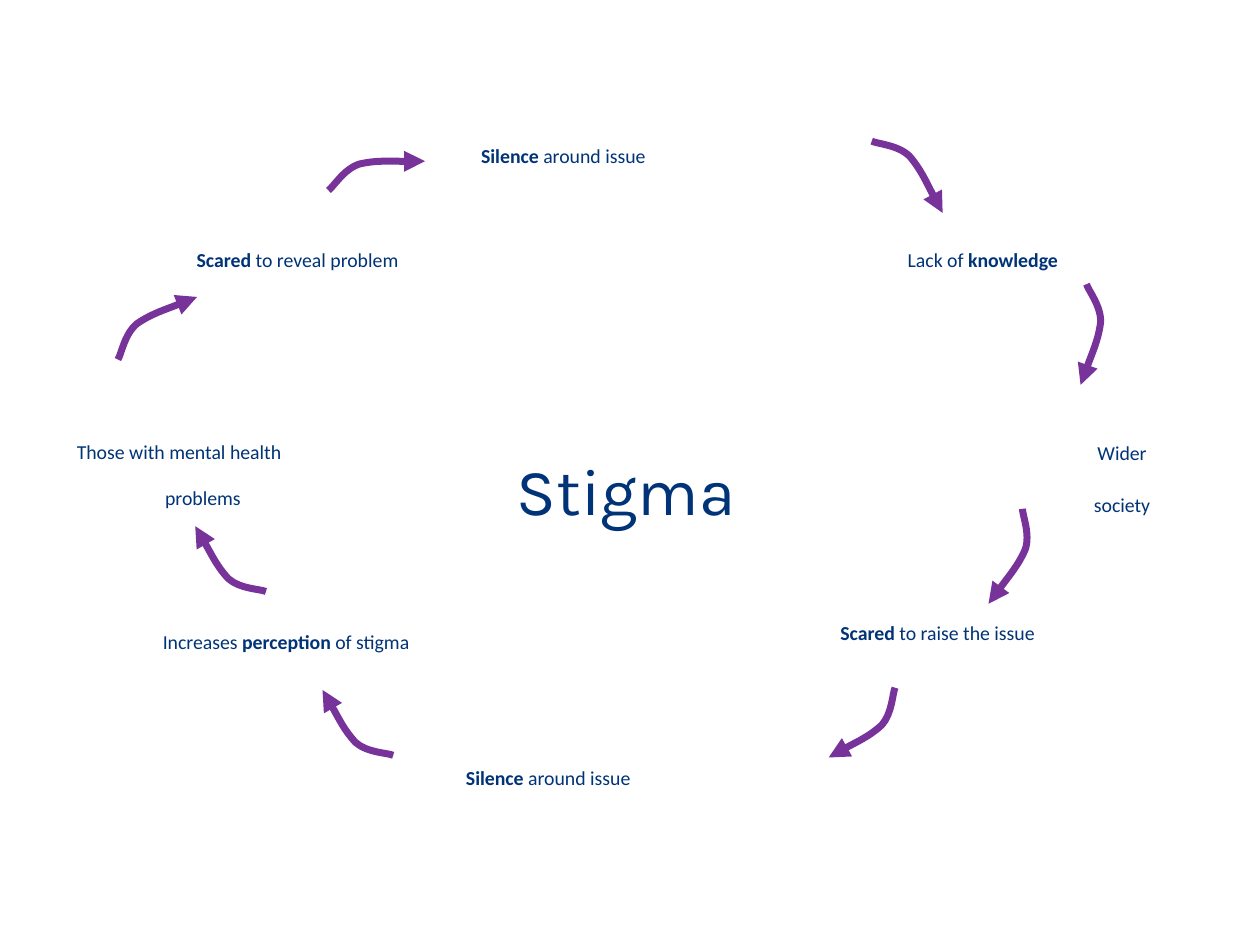
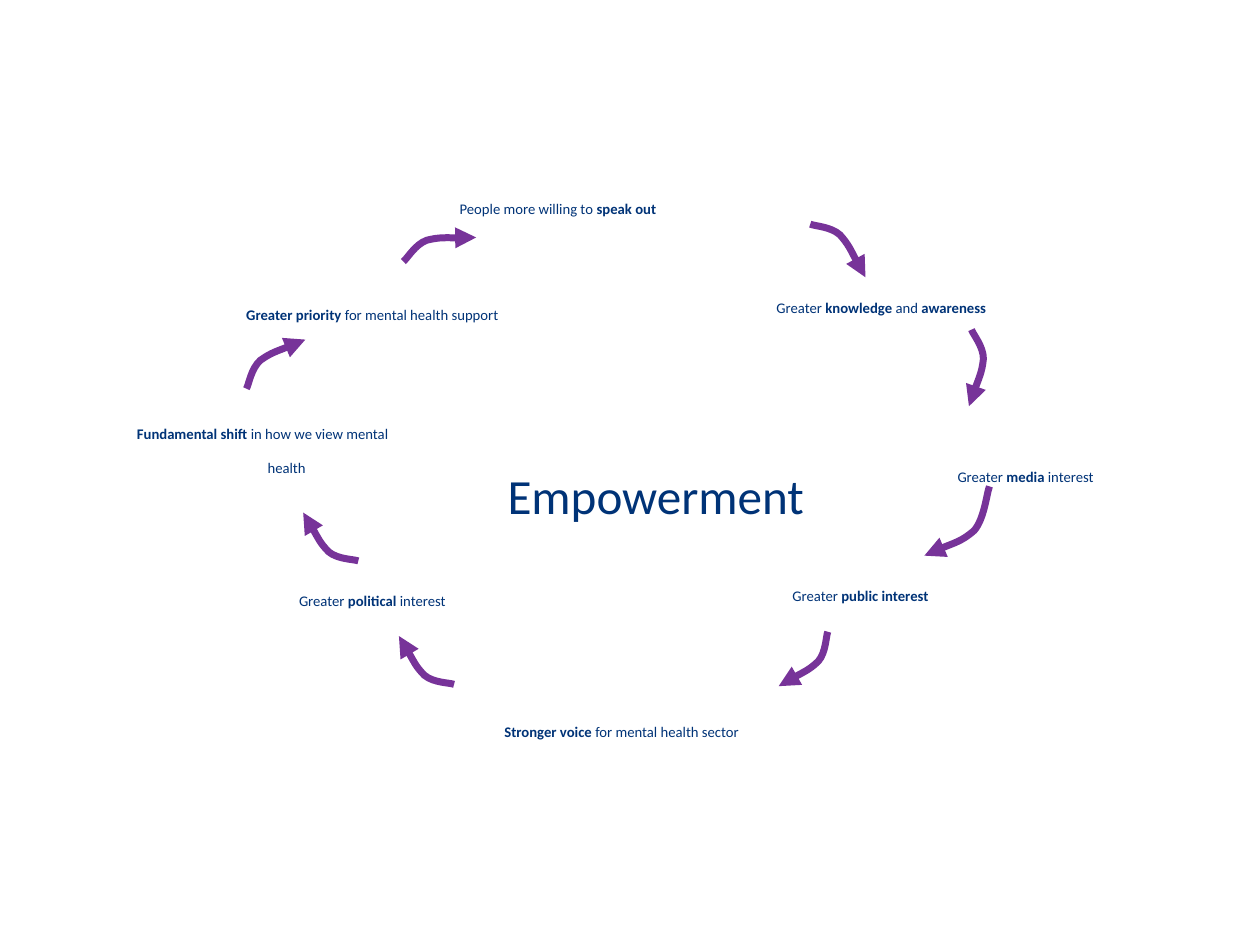
"""Build two slides that each show a ring of phrases joined by curved arrows."""
import dataclasses
import itertools

import pptx
import pptx.dml.color
import pptx.enum.text
import pptx.oxml.ns
import pptx.oxml.xmlchemy
import pptx.slide
import pptx.text.text
import pptx.util

NAVY = pptx.dml.color.RGBColor(0x00, 0x33, 0x77)
PURPLE = pptx.dml.color.RGBColor(0x77, 0x33, 0x99)
WHITE = pptx.dml.color.RGBColor(0xFF, 0xFF, 0xFF)
CENTER = pptx.enum.text.PP_ALIGN.CENTER
LEFT = pptx.enum.text.PP_ALIGN.LEFT
TOP = pptx.enum.text.MSO_ANCHOR.TOP
MIDDLE = pptx.enum.text.MSO_ANCHOR.MIDDLE
GROW = pptx.enum.text.MSO_AUTO_SIZE.SHAPE_TO_FIT_TEXT
FIXED = pptx.enum.text.MSO_AUTO_SIZE.NONE
BODY = "Calibri"
DROP = "-25000"
CURVE = [(0, 1), (0.05, 0.9), (0.13, 0.47), (0.29, 0.3),
         (0.47, 0.15), (0.86, 0.06), (1, 0)]


@dataclasses.dataclass
class Label:
    text: str
    box: tuple[float, float, float, float]
    hang: bool = True
    wrap: bool = False
    foot: float = 0


@dataclasses.dataclass
class Arrow:
    box: tuple[float, float, float, float]
    turn: float


@dataclasses.dataclass
class Ring:
    title: Label
    face: str
    head: float
    size: float
    labels: list[Label]
    arrows: list[Arrow]


RINGS = [
    Ring(
        Label("Stigma", (3.58, 2.92, 2.78, 0.83), hang=False, wrap=True),
        "Karla", 64.7, 19.4,
        [
            Label("*Silence *around issue", (3.72, 0.91, 2.76, 0.43), hang=False),
            Label("Wider\nsociety", (8.01, 3.14, 1.79, 1.6), wrap=True, foot=0.51),
            Label("*Scared *to reveal problem", (0.7, 1.74, 3.32, 0.43)),
            Label("Lack of *knowledge*", (6.55, 1.74, 2.5, 0.43)),
            Label("*Scared *to raise the issue", (5.8, 4.7, 3.28, 0.43)),
            Label("*Silence *around issue", (3.6, 5.85, 2.76, 0.43), hang=False),
            Label("Increases *perception *of stigma", (0.29, 4.77, 3.96, 0.43)),
            Label("Those with mental health problems", (0.23, 3.11, 2.38, 1.6),
                  wrap=True, foot=0.51),
        ],
        [
            Arrow((0.89, 2.43, 0.72, 0.35), 347.6),
            Arrow((2.63, 1.22, 0.72, 0.35), 9.1),
            Arrow((6.84, 1.23, 0.72, 0.35), 71.3),
            Arrow((8.24, 2.48, 0.72, 0.35), 119.3),
            Arrow((7.62, 4.24, 0.72, 0.35), 135.6),
            Arrow((6.5, 5.56, 0.68, 0.35), 160.8),
            Arrow((2.5, 5.56, 0.68, 0.35), 250),
            Arrow((1.49, 4.26, 0.68, 0.35), 250),
        ],
    ),
    Ring(
        Label("Empowerment", (3.55, 3.19, 3.31, 1.46), hang=False, wrap=True),
        BODY, 48.5, 14.5,
        [
            Label("People more willing to *speak out*", (3.55, 1.4, 3.2, 0.35), hang=False),
            Label("Greater *media* interest", (7.26, 3.29, 1.76, 1.2), wrap=True, foot=0.4),
            Label("*Greater priority *for mental health support", (0.95, 2.24, 4.01, 0.35)),
            Label("Greater *knowledge *and* awareness*", (5.28, 2.19, 3.43, 0.35)),
            Label("Greater* public interest*", (5.71, 4.47, 2.24, 0.35)),
            Label("*Stronger voice *for mental health sector", (3.43, 5.55, 3.01, 0.59),
                  hang=False, wrap=True),
            Label("Greater *political* interest", (1.75, 4.51, 2.41, 0.35)),
            Label("*Fundamental shift *in how we view mental health",
                  (0.97, 3.27, 2.23, 0.83), wrap=True, foot=0.4),
        ],
        [
            Arrow((1.92, 2.75, 0.54, 0.28), 347.6),
            Arrow((3.22, 1.84, 0.54, 0.28), 9.1),
            Arrow((6.38, 1.85, 0.54, 0.28), 71.3),
            Arrow((7.43, 2.78, 0.54, 0.28), 119.3),
            Arrow((7.3, 3.9, 0.59, 0.47), 171.8),
            Arrow((6.12, 5.09, 0.51, 0.28), 160.8),
            Arrow((3.13, 5.1, 0.51, 0.28), 250),
            Arrow((2.37, 4.12, 0.51, 0.28), 250),
        ],
    ),
]


def fill_text(frame: pptx.text.text.TextFrame, label: Label, face: str, size: float) -> None:
    frame.word_wrap = label.wrap
    frame.auto_size = FIXED if label.foot else GROW
    frame.vertical_anchor = MIDDLE if label.foot else TOP
    if label.foot:
        frame.margin_bottom = pptx.util.Inches(label.foot)
    for index, line in enumerate(label.text.split("\n")):
        para = frame.add_paragraph() if index else frame.paragraphs[0]
        para.alignment = CENTER if label.hang or label.wrap else LEFT
        if label.hang:
            props = para._p.get_or_add_pPr()
            props.set("marL", str(pptx.util.Inches(0.38)))
            props.set("indent", str(pptx.util.Inches(-0.38)))
        if index:
            para.space_before = pptx.util.Pt(3.5)
        para.font.name = face
        para.font.size = pptx.util.Pt(size)
        para.font.color.rgb = NAVY
        for part, words in enumerate(line.split("*")):
            if words:
                run = para.add_run()
                run.text = words
                run.font.bold = part % 2 == 1
                run._r.get_or_add_rPr().set("baseline", DROP)


def draw_title(slide: pptx.slide.Slide, ring: Ring) -> None:
    title = slide.shapes.title
    title.left, title.top, title.width, title.height = map(pptx.util.Inches, ring.title.box)
    fill_text(title.text_frame, ring.title, ring.face, ring.head)


def draw_label(slide: pptx.slide.Slide, label: Label, size: float) -> None:
    box = slide.shapes.add_textbox(*map(pptx.util.Inches, label.box))
    fill_text(box.text_frame, label, BODY, size)


def draw_arrow(slide: pptx.slide.Slide, arrow: Arrow) -> None:
    left, top, width, height = arrow.box
    points = [(pptx.util.Inches(left + x * width), pptx.util.Inches(top + y * height))
              for x, y in CURVE]
    pen = slide.shapes.build_freeform(*points[0])
    pen.add_line_segments(points[1:], close=False)
    shape = pen.convert_to_shape()
    lines = shape._element.xpath(".//a:lnTo")
    for first in range(0, len(lines), 3):
        trio = lines[first:first + 3]
        bend = pptx.oxml.xmlchemy.OxmlElement("a:cubicBezTo")
        trio[0].addprevious(bend)
        for point in list(itertools.chain.from_iterable(trio)):
            bend.append(point)
        for line in trio:
            line.getparent().remove(line)
    shape.rotation = arrow.turn
    shape.shadow.inherit = False
    shape.fill.background()
    shape.line.color.rgb = PURPLE
    shape.line.width = pptx.util.Pt(4)
    tip = pptx.oxml.xmlchemy.OxmlElement("a:tailEnd")
    tip.set("type", "triangle")
    shape._element.spPr.find(pptx.oxml.ns.qn("a:ln")).append(tip)


def main() -> None:
    deck = pptx.Presentation()
    deck.slide_width, deck.slide_height = pptx.util.Inches(10), pptx.util.Inches(7.5)
    back = deck.slide_master.background.fill
    back.solid()
    back.fore_color.rgb = WHITE
    for ring in RINGS:
        slide = deck.slides.add_slide(deck.slide_layouts[5])
        for label in ring.labels:
            draw_label(slide, label, ring.size)
        for arrow in ring.arrows:
            draw_arrow(slide, arrow)
        draw_title(slide, ring)
    deck.save("out.pptx")


if __name__ == "__main__":
    main()
